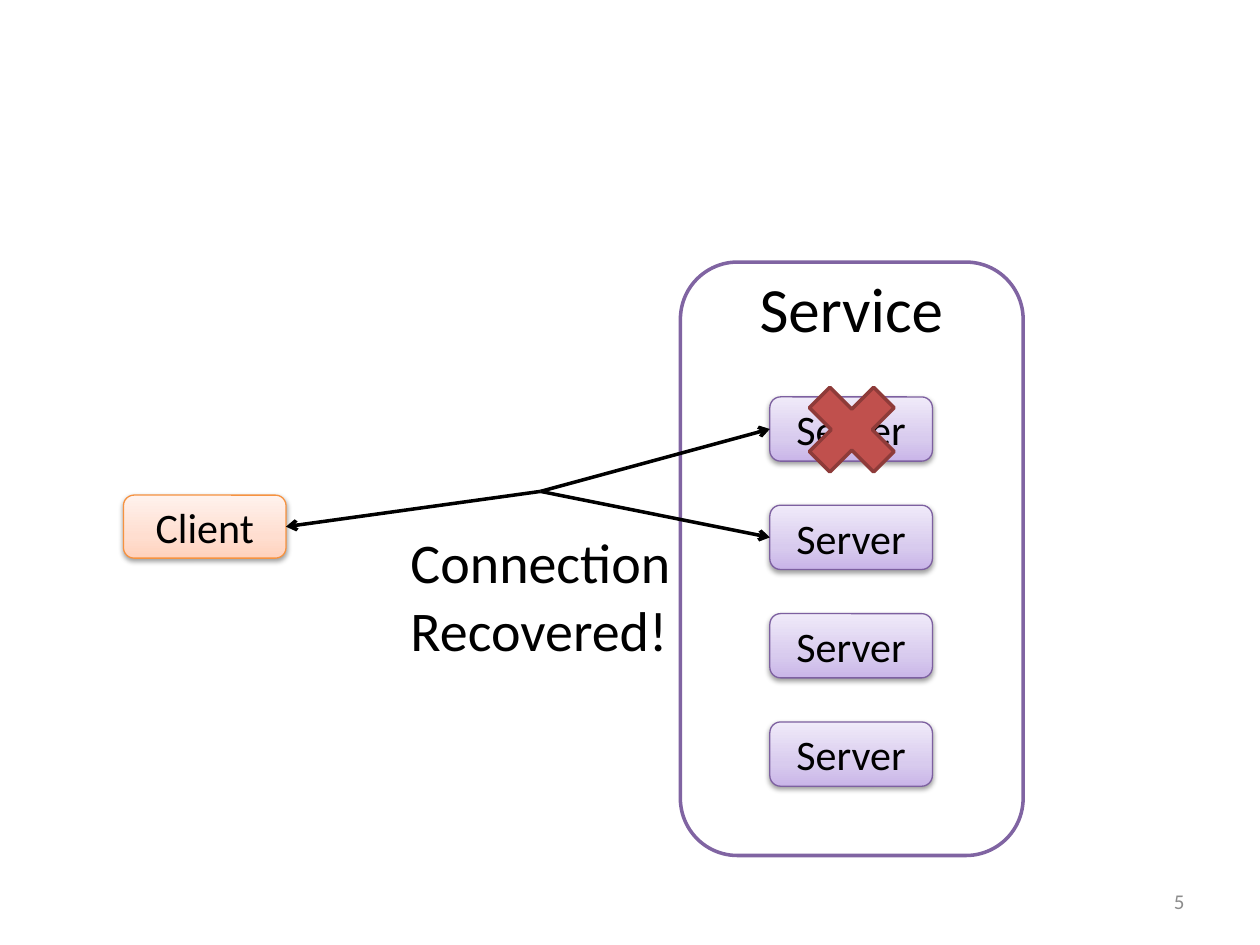
from dataclasses import dataclass

from lxml.etree import SubElement
from pptx import Presentation
from pptx.dml.color import RGBColor
from pptx.enum.shapes import MSO_CONNECTOR, MSO_SHAPE
from pptx.enum.text import MSO_ANCHOR, PP_ALIGN
from pptx.oxml.ns import qn
from pptx.util import Inches, Pt


@dataclass(frozen=True)
class Theme:
    font: str = "Calibri"
    ink: str = "000000"
    grey: str = "8C8C8C"
    frame: str = "8064A2"
    cross: str = "C0504D"
    edge: str = "8E3B39"
    peach: tuple = ("F69240", "FFD2BD", "FFDED0", "FFF2ED")
    lilac: tuple = ("7D60A0", "C9B5E8", "D8CBEE", "F0EAF9")
    head: int = 36
    note: int = 32
    node: int = 24
    foot: int = 12
    thin: float = 0.75
    thick: float = 2


def write(shape, text, font, size, ink, align=PP_ALIGN.LEFT,
          anchor=MSO_ANCHOR.TOP, wrap=True):
    frame = shape.text_frame
    frame.text = text
    frame.word_wrap = wrap
    frame.vertical_anchor = anchor
    for para in frame.paragraphs:
        para.alignment = align
        para.font.name = font
        para.font.size = Pt(size)
        para.font.color.rgb = RGBColor.from_string(ink)


class Board:
    cols, rows = 100, 75

    def __init__(self, deck, theme):
        self.theme = theme
        self.wide, self.high = deck.slide_width, deck.slide_height
        self.slide = deck.slides.add_slide(deck.slide_layouts[6])

    def place(self, *spans):
        units = (self.wide / self.cols, self.high / self.rows)
        return [round(span * units[i % 2]) for i, span in enumerate(spans)]

    def shape(self, kind, spot, line, width, fill=None):
        item = self.slide.shapes.add_shape(kind, *self.place(*spot))
        item.shadow.inherit = False
        item.line.color.rgb = RGBColor.from_string(line)
        item.line.width = Pt(width)
        if fill:
            item.fill.solid()
            item.fill.fore_color.rgb = RGBColor.from_string(fill)
        else:
            item.fill.background()
        return item

    def node(self, text, spot, tones):
        look = self.theme
        line, *shades = tones
        item = self.shape(MSO_SHAPE.ROUNDED_RECTANGLE, spot, line, look.thin)
        item.fill.gradient()
        item.fill.gradient_angle = 90
        props = item._element.spPr
        stops = props.find(".//" + qn("a:gsLst"))
        stops.clear()
        for share, shade in zip((0, 35, 100), shades):
            stop = SubElement(stops, qn("a:gs"), pos=str(share * 1000))
            SubElement(stop, qn("a:srgbClr"), val=shade)
        shade = SubElement(props.find(qn("a:effectLst")), qn("a:outerShdw"),
                           blurRad=str(Pt(3.1)), dist=str(Pt(1.6)),
                           dir="5400000", rotWithShape="0")
        tint = SubElement(shade, qn("a:srgbClr"), val=look.ink)
        SubElement(tint, qn("a:alpha"), val="38000")
        write(item, text, look.font, look.node, look.ink,
              align=PP_ALIGN.CENTER, anchor=MSO_ANCHOR.MIDDLE)

    def label(self, text, spot, size, ink, **form):
        box = self.slide.shapes.add_textbox(*self.place(*spot))
        write(box, text, self.theme.font, size, ink, **form)

    def arrow(self, start, end):
        look = self.theme
        link = self.slide.shapes.add_connector(
            MSO_CONNECTOR.STRAIGHT, *self.place(*start, *end))
        link.line.color.rgb = RGBColor.from_string(look.ink)
        link.line.width = Pt(look.thick)
        SubElement(link.line._get_or_add_ln(), qn("a:tailEnd"), type="arrow")
        SubElement(link._element.spPr, qn("a:effectLst"))


def main():
    deck = Presentation()
    deck.slide_width, deck.slide_height = Inches(10), Inches(7.5)
    look = Theme()
    board = Board(deck, look)

    left, top, step, wide, high = 61.1, 31.5, 8.6, 12.9, 5.1
    board.node("Client", (9.8, 39.3, wide, 5), look.peach)
    for i in range(4):
        board.node("Server", (left, top + i * step, wide, high), look.lilac)

    board.label("Service", (59.3, 20.9, 16.6, 7.1), look.head, look.ink,
                wrap=False)
    board.shape(MSO_SHAPE.ROUNDED_RECTANGLE, (54, 20.8, 27.2, 47.1),
                look.frame, look.thick)
    board.shape(MSO_SHAPE.MATH_MULTIPLY, (62.7, 29.2, 9.8, 9.8),
                look.edge, look.thick, look.cross)

    fork = (42.9, 39)
    mid = top + high / 2
    for end in ((left, mid), (left, mid + step), (22.7, 41.8)):
        board.arrow(fork, end)

    board.label("Connection\nRecovered!", (31.6, 41.4, 23.6, 11.8),
                look.note, look.ink, wrap=False)
    board.label("5", (71.7, 69.5, 23.3, 4), look.foot, look.grey,
                align=PP_ALIGN.RIGHT, anchor=MSO_ANCHOR.MIDDLE)
    deck.save("out.pptx")


if __name__ == "__main__":
    main()
